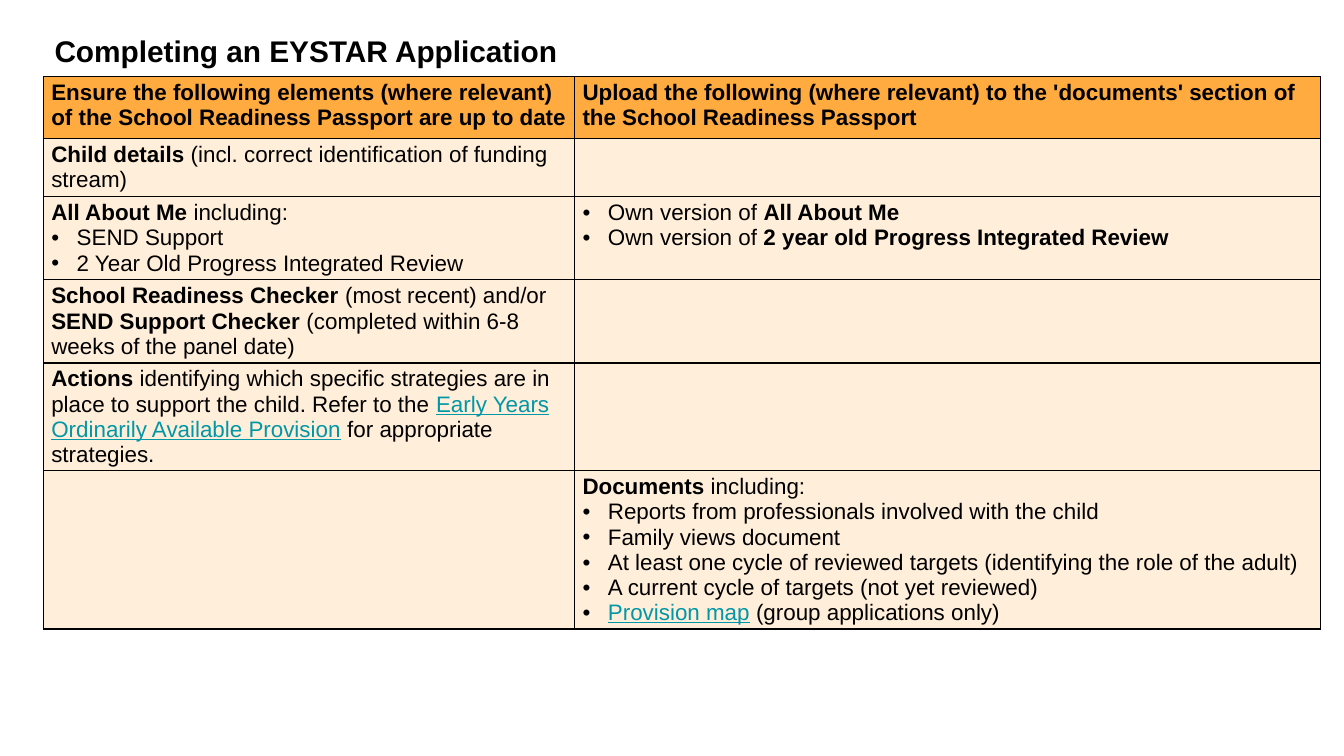
from pptx import Presentation
from pptx.dml.color import RGBColor
from pptx.enum.text import MSO_ANCHOR, MSO_AUTO_SIZE, PP_ALIGN
from pptx.oxml.ns import qn
from pptx.util import Cm, Pt
from lxml import etree

LEFT, MIDDLE, NO_FIT = PP_ALIGN.LEFT, MSO_ANCHOR.MIDDLE, MSO_AUTO_SIZE.NONE
TITLE_ONLY = 5
COLORS = {
    "text": "000000",
    "link": "0097A7",
    "header": "FFAB40",
    "body": "FFEED9",
    "paper": "FFFFFF",
}


def rgb(name):
    return RGBColor.from_string(COLORS[name])


def bold(text):
    return text, {"bold": True}


def link(text):
    return text, {"color": "link", "underline": True}


def line(*runs):
    return False, runs


def item(*runs):
    """A bulleted paragraph made of the given runs."""
    return True, runs


def add_text(p, text, size=12, bold=False, color="text", underline=False):
    r = p.add_run()
    r.text = text
    r.font.name = "Arial"
    r.font.size = Pt(size)
    r.font.bold = bold
    r.font.underline = underline
    r.font.color.rgb = rgb(color)


def add_bullet(p):
    pPr = p._p.get_or_add_pPr()
    pPr.set("marL", str(Cm(0.48)))
    pPr.set("indent", str(-Cm(0.48)))
    color = etree.SubElement(pPr, qn("a:buClr"))
    etree.SubElement(color, qn("a:srgbClr"), val=COLORS["text"])
    etree.SubElement(pPr, qn("a:buFont"), typeface="Arial")
    etree.SubElement(pPr, qn("a:buChar"), char="•")


def add_borders(cell, width=0.77):
    tcPr = cell._tc.get_or_add_tcPr()
    for side in ("lnL", "lnR", "lnT", "lnB"):
        ln = etree.SubElement(tcPr, qn(f"a:{side}"), w=str(Pt(width)))
        fill = etree.SubElement(ln, qn("a:solidFill"))
        etree.SubElement(fill, qn("a:srgbClr"), val=COLORS["text"])


class SlideBuilder:
    def __init__(self, prs):
        self.slide = prs.slides.add_slide(prs.slide_layouts[TITLE_ONLY])

    def title(self, text, left, top, width, height):
        sp = self.slide.shapes.title
        sp.left, sp.top, sp.width, sp.height = map(Cm, (left, top, width, height))
        sp.fill.solid()
        sp.fill.fore_color.rgb = rgb("paper")
        tf = sp.text_frame
        tf.word_wrap = True
        tf.auto_size = NO_FIT
        tf.vertical_anchor = MIDDLE
        tf.margin_left = tf.margin_right = Cm(0.19)
        tf.margin_top = tf.margin_bottom = Cm(0.1)
        p = tf.paragraphs[0]
        p.alignment = LEFT
        add_text(p, text, size=16, bold=True)

    def table(self, rows, left, top, widths, heights):
        frame = self.slide.shapes.add_table(
            len(rows), len(widths), Cm(left), Cm(top),
            Cm(sum(widths)), Cm(sum(heights)))
        table = frame.table
        for column, width in zip(table.columns, widths):
            column.width = Cm(width)
        for i, (row, height) in enumerate(zip(rows, heights)):
            table.rows[i].height = Cm(height)
            for j, paragraphs in enumerate(row):
                self.cell(table.cell(i, j), paragraphs, "body" if i else "header")

    def cell(self, cell, paragraphs, fill):
        add_borders(cell)
        cell.fill.solid()
        cell.fill.fore_color.rgb = rgb(fill)
        cell.margin_left, cell.margin_right = Cm(0.15), Cm(0.1)
        cell.margin_top = cell.margin_bottom = Cm(0.07)
        tf = cell.text_frame
        for i, (bulleted, runs) in enumerate(paragraphs):
            p = tf.add_paragraph() if i else tf.paragraphs[0]
            if bulleted:
                add_bullet(p)
            for run in runs:
                text, style = (run, {}) if isinstance(run, str) else run
                add_text(p, text, **style)


EMPTY = []
ROWS = [
    ([line(bold("Ensure the following elements (where relevant) of the "
                "School Readiness Passport are up to date"))],
     [line(bold("Upload the following (where relevant) to the 'documents' "
                "section of the School Readiness Passport"))]),
    ([line(bold("Child details "),
           "(incl. correct identification of funding stream)")],
     EMPTY),
    ([line(bold("All About Me"), " including:"),
      item("SEND Support"),
      item("2 Year Old Progress Integrated Review")],
     [item("Own version of ", bold("All About Me")),
      item("Own version of", bold(" 2 year old Progress Integrated Review"))]),
    ([line(bold("School Readiness Checker"), " (most recent) and/or ",
           bold("SEND Support Checker"),
           " (completed within 6-8 weeks of the panel date)")],
     EMPTY),
    ([line(bold("Actions"),
           " identifying which specific strategies are in place to support "
           "the child. Refer to the ",
           link("Early Years Ordinarily Available Provision"),
           " for appropriate strategies.")],
     EMPTY),
    (EMPTY,
     [line(bold("Documents "), "including:"),
      item("Reports from professionals involved with the child"),
      item("Family views document"),
      item("At least one cycle of reviewed targets "
           "(identifying the role of the adult)"),
      item("A current cycle of targets (not yet reviewed)"),
      item(link("Provision map"), " (group applications only)")]),
]


def main():
    prs = Presentation()
    prs.slide_width, prs.slide_height = Cm(25.4), Cm(14.29)
    s = SlideBuilder(prs)
    s.title("Completing an EYSTAR Application", 0.84, 0.5, 23.34, 0.9)
    s.table(ROWS, 0.82, 1.45, widths=(10.04, 14.1),
            heights=(1.17, 1.1, 1.57, 1.57, 2.04, 2.99))
    prs.save("out.pptx")


if __name__ == "__main__":
    main()
